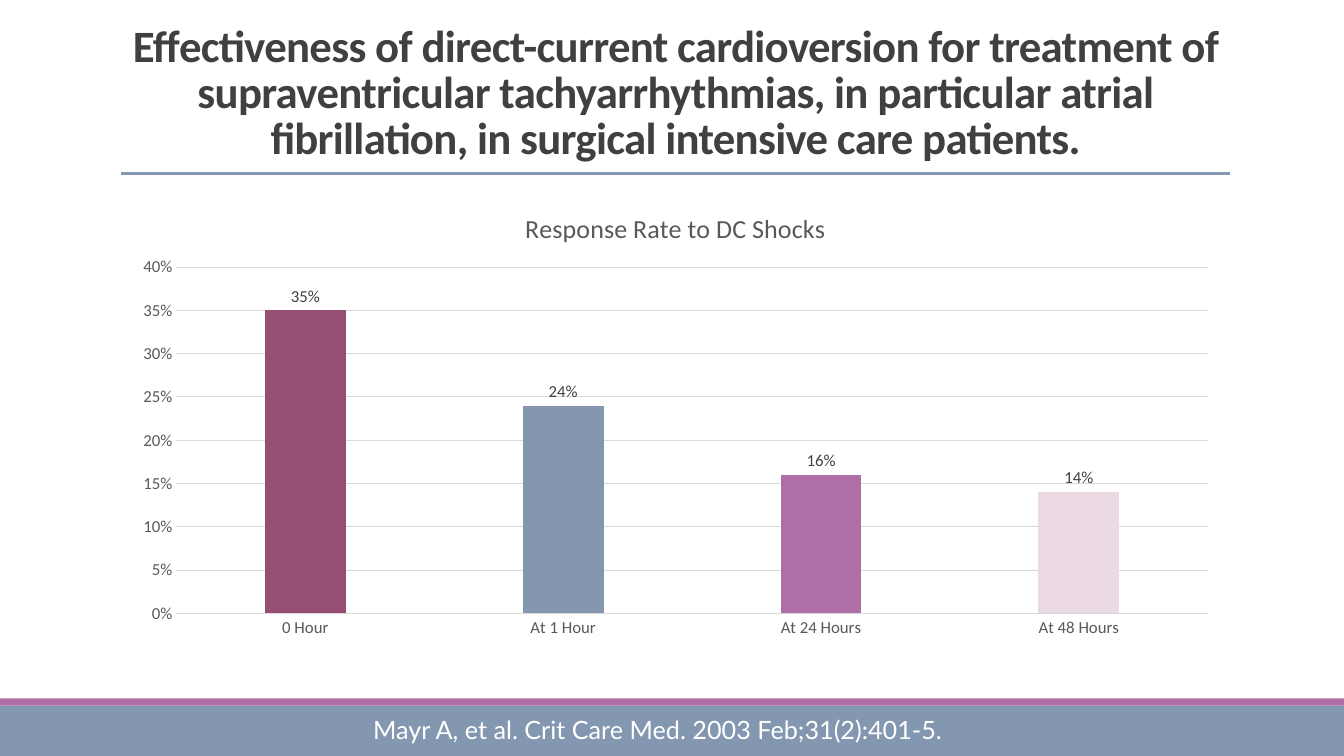
from lxml import etree
from pptx import Presentation
from pptx.chart.data import CategoryChartData
from pptx.dml.color import RGBColor
from pptx.enum.chart import XL_CHART_TYPE as CT, XL_LABEL_POSITION as LP, XL_TICK_MARK as TM
from pptx.enum.shapes import MSO_CONNECTOR as MC, MSO_SHAPE as MS
from pptx.enum.text import MSO_ANCHOR as MA, PP_ALIGN as PA
from pptx.oxml.ns import qn
from pptx.util import Inches, Pt

WIDTH, HEIGHT = 13.33, 7.5
BLUE, ORCHID, GRAY, GRID = "8497B0", "B06EA7", "595959", "D9D9D9"
RULE = "8496B0"
RATES = {"0 Hour": 0.35, "At 1 Hour": 0.24, "At 24 Hours": 0.16, "At 48 Hours": 0.14}
BARS = ["954F72", RULE, ORCHID, "EBDAE3"]


def rgb(color):
    """Turn a hex string into a colour."""
    return RGBColor.from_string(color)


def style(font, size, color, name="Calibri", bold=False):
    """Set the size, colour, face and weight of a font."""
    font.size, font.name, font.bold = Pt(size), name, bold
    font.color.rgb = rgb(color)


def add_text(s, text, box, anchor=MA.TOP, line=1.0, spacing=0, **font):
    """Add a centred, wrapped text box."""
    tf = s.shapes.add_textbox(*map(Inches, box)).text_frame
    tf.word_wrap, tf.vertical_anchor = True, anchor
    p = tf.paragraphs[0]
    p.alignment, p.line_spacing = PA.CENTER, line
    r = p.add_run()
    r.text = text
    style(r.font, **font)
    if spacing:
        r.font._element.set("spc", str(int(spacing * 100)))


def add_bar(s, box, color):
    """Add a plain filled rectangle."""
    sp = s.shapes.add_shape(MS.RECTANGLE, *map(Inches, box))
    sp.shadow.inherit = False
    sp.fill.solid()
    sp.fill.fore_color.rgb = rgb(color)
    sp.line.fill.background()


def add_heading(s, x, y, w, h):
    """Add the title with the rule below it."""
    add_text(s, "Effectiveness of direct-current cardioversion for treatment of "
             "supraventricular tachyarrhythmias, in particular atrial fibrillation, "
             "in surgical intensive care patients.", (x, y, w, h), anchor=MA.BOTTOM,
             line=0.85, spacing=-0.5, size=32, color="404040", bold=True)
    rule_y = y + h + 0.05
    rule = s.shapes.add_connector(MC.STRAIGHT, *map(Inches, (x, rule_y, x + w, rule_y)))
    rule.line.color.rgb, rule.line.width = rgb(RULE), Pt(2.25)
    etree.SubElement(rule._element.spPr, qn("a:effectLst"))


def place_plot(chart, **fractions):
    """Fix the inner plot area as fractions of the chart."""
    area = chart._chartSpace.chart.plotArea
    layout = area.find(qn("c:layout"))
    if layout is None:
        layout = etree.Element(qn("c:layout"))
        area.insert(0, layout)
    manual = etree.SubElement(layout, qn("c:manualLayout"))
    settings = {"layoutTarget": "inner", "xMode": "edge", "yMode": "edge", **fractions}
    for tag, value in settings.items():
        etree.SubElement(manual, qn("c:" + tag)).set("val", str(value))


def add_rate_chart(s, x, y, w, h):
    """Add the column chart of response rates."""
    data = CategoryChartData(number_format="0%")
    data.categories = list(RATES)
    data.add_series("Series 1", list(RATES.values()))
    chart = s.shapes.add_chart(CT.COLUMN_CLUSTERED, *map(Inches, (x, y, w, h)), data).chart
    style(chart.font, 10, "000000")
    chart.has_legend = False
    chart.has_title = True
    tf = chart.chart_title.text_frame
    tf.text = "Response Rate to DC Shocks"
    style(tf.paragraphs[0].runs[0].font, 18.6, GRAY)
    place_plot(chart, x=0.05, y=0.166, w=0.93, h=0.76)

    for axis in (chart.category_axis, chart.value_axis):
        axis.major_tick_mark = axis.minor_tick_mark = TM.NONE
        style(axis.tick_labels.font, 12, GRAY)
    rates = chart.value_axis
    rates.minimum_scale, rates.maximum_scale, rates.major_unit = 0, 0.4, 0.05
    rates.tick_labels.number_format = "0%"
    rates.tick_labels.number_format_is_linked = False
    rates.format.line.fill.background()
    for line in (chart.category_axis.format.line, rates.major_gridlines.format.line):
        line.color.rgb, line.width = rgb(GRID), Pt(0.75)

    plot = chart.plots[0]
    plot.gap_width, plot.overlap, plot.vary_by_categories = 219, -27, False
    series = plot.series[0]
    series.invert_if_negative = False
    for i, color in enumerate(BARS):
        fill = series.points[i].format.fill
        fill.solid()
        fill.fore_color.rgb = rgb(color)
    labels = series.data_labels
    labels.show_value, labels.position = True, LP.OUTSIDE_END
    labels.number_format, labels.number_format_is_linked = "0%", False
    style(labels.font, 12, "404040")


def add_footer(s, x, y, w, h):
    """Add the footer band, its top stripe and the citation."""
    stripe = 0.07
    add_bar(s, (x, y + stripe, w, h - stripe), BLUE)
    add_bar(s, (x, y, w, stripe), ORCHID)
    add_text(s, "Mayr A, et al. Crit Care Med. 2003 Feb;31(2):401-5. ",
             (x + 3.22, y + 0.11, 6.67, 0.4), size=18, color="FFFFFF", name="Lato")


def main():
    """Build and save the slide."""
    prs = Presentation()
    prs.slide_width, prs.slide_height = Inches(WIDTH), Inches(HEIGHT)
    s = prs.slides.add_slide(prs.slide_layouts[6])
    add_footer(s, 0, 6.93, WIDTH, HEIGHT - 6.93)
    add_heading(s, 1.2, 0.31, 11, 1.36)
    add_rate_chart(s, 1.2, 1.9, 11, 4.52)
    prs.save("out.pptx")


if __name__ == "__main__":
    main()
